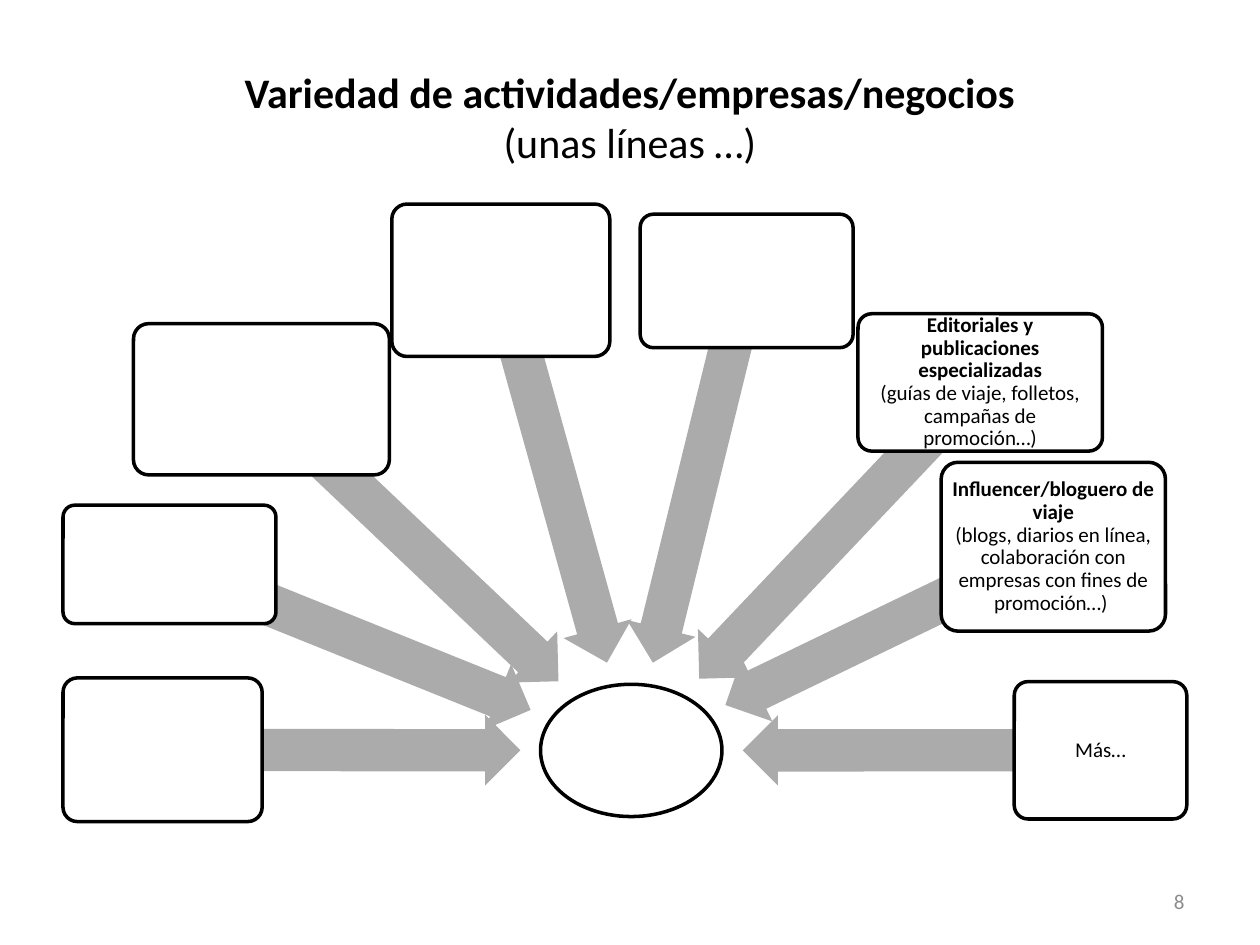
from math import atan2, cos, degrees, sin

from pptx import Presentation
from pptx.dml.color import RGBColor
from pptx.enum.shapes import MSO_SHAPE as Shape
from pptx.enum.text import MSO_ANCHOR as Anchor, PP_ALIGN as Align
from pptx.util import Pt

BLACK, WHITE, ARROW_GREY, NUMBER_GREY = "000000", "FFFFFF", "ABABAB", "8C8C8C"

# Each text is a list of (words, bold) spans, one to a line.
TITLE = [("Variedad de actividades/empresas/negocios", True), ("(unas líneas …)", False)]
PUBLISHERS = [
    ("Editoriales y publicaciones especializadas", True),
    ("(guías de viaje, folletos, campañas de promoción…)", False),
]
INFLUENCERS = [
    ("Influencer/bloguero de viaje", True),
    ("(blogs, diarios en línea, colaboración con empresas con fines de promoción…) ", False),
]
MORE = [("Más…", False)]

HUB = (308.9, 391, 103.7, 75.6)
ARROW_THICKNESS = 40.3
# left, top, width, height, length of the arrow to the hub, text
IDEAS = [
    (36, 387.4, 113.8, 82.1, 204.5, []),
    (36, 288.7, 121.7, 67.7, 222.5, []),
    (76.3, 185, 146.2, 86.4, 234, []),
    (223.9, 116.6, 124.6, 87.1, 226.8, []),
    (365.8, 122.4, 121.7, 76.3, 224.6, []),
    (490.3, 179.3, 139.7, 78.5, 233.3, PUBLISHERS),
    (537.8, 264.2, 128.2, 96.5, 208.1, INFLUENCERS),
    (579.6, 389.5, 98.6, 78.5, 204.5, MORE),
]
IDEA_MARGINS = dict.fromkeys(
    ("margin_left", "margin_right", "margin_top", "margin_bottom"), Pt(2.4))
IDEA_SPACING = {"line_spacing": 0.9, "space_after": Pt(4.2)}


def color(value):
    return RGBColor.from_string(value)


def set_all(target, values):
    for name, value in values.items():
        setattr(target, name, value)


def center(left, top, width, height):
    return left + width / 2, top + height / 2


def write(box, spans, size, ink=BLACK, align=Align.CENTER, margins=None, spacing=None):
    frame = box.text_frame
    set_all(frame, {"word_wrap": True, "vertical_anchor": Anchor.MIDDLE, **(margins or {})})
    para = frame.paragraphs[0]
    set_all(para, {"alignment": align, **(spacing or {})})
    for index, (words, bold) in enumerate(spans):
        if index:
            para.add_line_break()
        span = para.add_run()
        span.text = words
        set_all(span.font, {"name": "Calibri", "size": Pt(size), "bold": bold})
        span.font.color.rgb = color(ink)


def add_shape(page, kind, place, fill, outlined=True):
    shape = page.shapes.add_shape(kind, *map(Pt, place))
    shape.shadow.inherit = False
    shape.fill.solid()
    shape.fill.fore_color.rgb = color(fill)
    if outlined:
        shape.line.color.rgb = color(BLACK)
        shape.line.width = Pt(2)
    else:
        shape.line.fill.background()
    return shape


def add_arrow(page, start, target, length):
    """Draw a block arrow of the given length from start towards target."""
    angle = atan2(target[1] - start[1], target[0] - start[0])
    middle_x = start[0] + cos(angle) * length / 2
    middle_y = start[1] + sin(angle) * length / 2
    place = (middle_x - length / 2, middle_y - ARROW_THICKNESS / 2, length, ARROW_THICKNESS)
    arrow = add_shape(page, Shape.LEFT_ARROW, place, ARROW_GREY, outlined=False)
    arrow.adjustments[0], arrow.adjustments[1] = 0.6, 0.5
    arrow.rotation = (degrees(angle) + 180) % 360


def add_idea(page, place, spans):
    box = add_shape(page, Shape.ROUNDED_RECTANGLE, place, WHITE)
    box.adjustments[0] = 0.1
    if spans:
        write(box, spans, 12, margins=IDEA_MARGINS, spacing=IDEA_SPACING)


def main():
    deck = Presentation()
    deck.slide_width, deck.slide_height = Pt(720), Pt(540)
    page = deck.slides.add_slide(deck.slide_layouts[6])

    write(page.shapes.add_textbox(Pt(36), Pt(21.6), Pt(648), Pt(90)), TITLE, 24)
    add_shape(page, Shape.OVAL, HUB, WHITE)
    for *place, length, spans in IDEAS:
        add_arrow(page, center(*place), center(*HUB), length)
        add_idea(page, place, spans)
    number = page.shapes.add_textbox(Pt(516), Pt(500.5), Pt(168), Pt(28.75))
    write(number, [("8", False)], 12, NUMBER_GREY, Align.RIGHT)

    deck.save("out.pptx")


if __name__ == "__main__":
    main()
